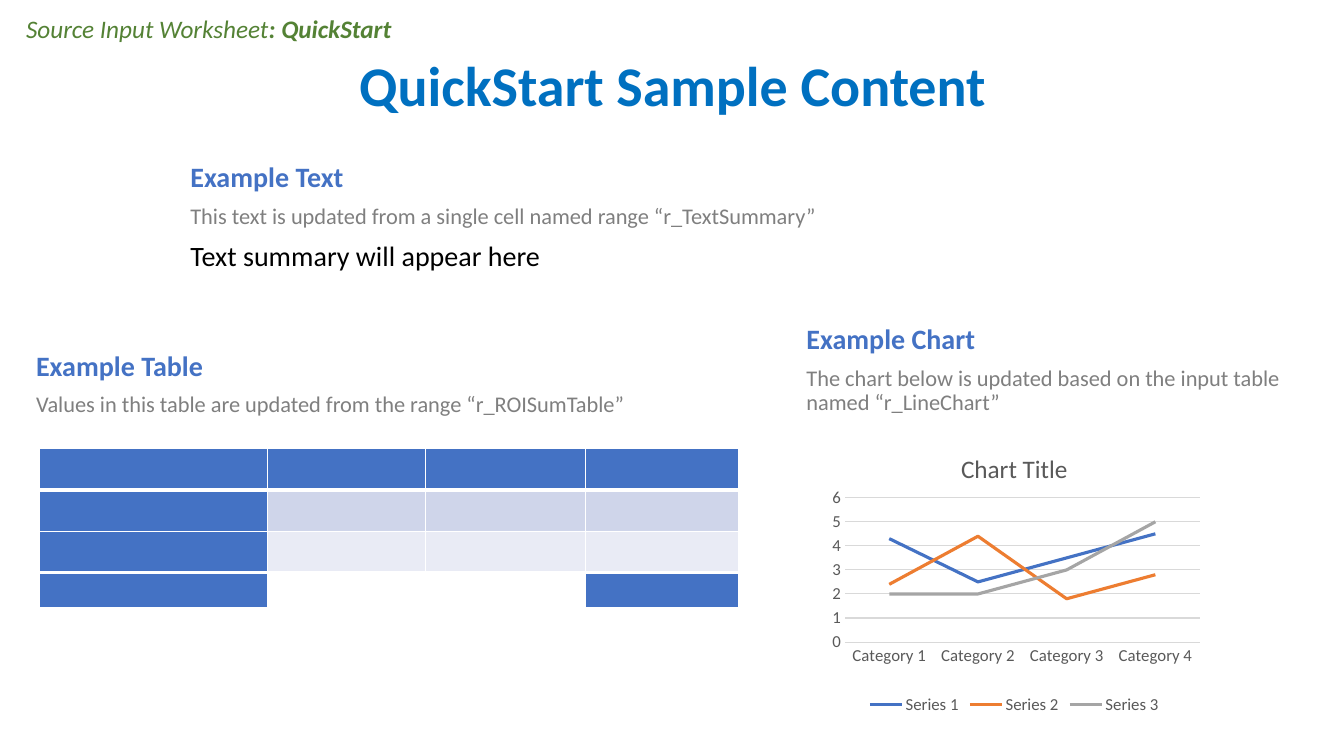
from lxml import etree
from pptx import Presentation, util as u
from pptx.chart.data import CategoryChartData
from pptx.dml.color import RGBColor
from pptx.enum import chart as ch, text
from pptx.oxml import parse_xml
from pptx.oxml.ns import nsdecls, qn

COLORS = {"title": "0070C0", "source": "548235", "heading": "4472C4",
          "note": "7F7F7F", "text": "000000", "chart_text": "595959",
          "grid": "D9D9D9", "white": "FFFFFF", "head": "4472C4",
          "band1": "CFD5EA", "band2": "E9EBF5", "blue": "4472C4",
          "orange": "ED7D31", "gray": "A5A5A5"}


def rgb(name):
    return RGBColor.from_string(COLORS[name])


def box(*lengths):
    return [u.Inches(n) for n in lengths]


class SlideBuilder:
    font = "Calibri"

    def __init__(self, prs):
        self.s = prs.slides.add_slide(prs.slide_layouts[5])

    def format_font(self, font, size, color, bold=False, italic=False):
        font.name, font.size = self.font, u.Pt(size)
        font.bold, font.italic = bold, italic
        font.color.rgb = rgb(color)

    def run(self, p, content, **fmt):
        r = p.add_run()
        r.text = content
        self.format_font(r.font, **fmt)

    def title(self, content, at):
        sp = self.s.shapes.title
        sp.left, sp.top, sp.width, sp.height = box(*at)
        tf = sp.text_frame
        tf.vertical_anchor = text.MSO_ANCHOR.MIDDLE
        p = tf.paragraphs[0]
        p.alignment, p.line_spacing = text.PP_ALIGN.CENTER, 0.9
        self.run(p, content, size=40, color="title", bold=True)

    def text_box(self, at, before=0, after=0, spacing=1.0):
        """Add an empty text box and return its paragraph."""
        tf = self.s.shapes.add_textbox(*box(*at)).text_frame
        tf.word_wrap = True
        tf.auto_size = text.MSO_AUTO_SIZE.SHAPE_TO_FIT_TEXT
        p = tf.paragraphs[0]
        p.space_before, p.space_after = u.Pt(before), u.Pt(after)
        p.line_spacing = spacing
        return p

    def label(self, content, at, **fmt):
        self.run(self.text_box(at, before=10, after=4, spacing=0.9), content, **fmt)

    def cell(self, cell, fill, top, bottom):
        """Fill a cell and give it white borders; top and bottom are in points."""
        cell.margin_top = cell.margin_bottom = 0
        tcPr = cell._tc.get_or_add_tcPr()
        for side, width in zip("LRTB", (1, 1, top, bottom)):
            tcPr.append(parse_xml(
                f'<a:ln{side} {nsdecls("a")} w="{u.Pt(width)}"><a:solidFill>'
                f'<a:srgbClr val="{COLORS["white"]}"/></a:solidFill></a:ln{side}>'))
        cell.fill.solid()
        cell.fill.fore_color.rgb = rgb(fill)

    def table(self, at, widths, heights, fills):
        tb = self.s.shapes.add_table(len(heights), len(widths), *box(*at)).table
        tb.last_row = tb.first_col = True
        for col, width in zip(tb.columns, widths):
            col.width = u.Inches(width)
        last = len(heights) - 1
        for i, (row, height) in enumerate(zip(tb.rows, heights)):
            row.height = u.Inches(height)
            for cell, fill in zip(row.cells, fills[i]):
                self.cell(cell, fill, top=3 if i in (1, last) else 1,
                          bottom=3 if i in (0, last - 1) else 1)

    def axis(self, axis):
        axis.major_tick_mark = axis.minor_tick_mark = ch.XL_TICK_MARK.NONE
        self.format_font(axis.tick_labels.font, size=12, color="chart_text")

    def line(self, line, color, width):
        line.color.rgb = rgb(color)
        line.width = u.Pt(width)

    def plot_layout(self, chart, **place):
        """Place the inner plot area by fractions of the chart."""
        area = chart.element.find(".//" + qn("c:plotArea"))
        for old in area.findall(qn("c:layout")):
            area.remove(old)
        layout = etree.Element(qn("c:layout"))
        manual = etree.SubElement(layout, qn("c:manualLayout"))
        values = {"layoutTarget": "inner", "xMode": "edge", "yMode": "edge", **place}
        for tag, val in values.items():
            etree.SubElement(manual, qn("c:" + tag)).set("val", str(val))
        area.insert(0, layout)

    def line_chart(self, title, at, categories, series):
        data = CategoryChartData()
        data.categories = categories
        for name, values, _ in series:
            data.add_series(name, values)
        chart = self.s.shapes.add_chart(
            ch.XL_CHART_TYPE.LINE, *box(*at), data).chart
        self.format_font(chart.font, size=10, color="text")
        self.run(chart.chart_title.text_frame.paragraphs[0], title,
                 size=18, color="chart_text")
        chart.chart_title.include_in_layout = False
        chart.has_legend = True
        chart.legend.position = ch.XL_LEGEND_POSITION.BOTTOM
        chart.legend.include_in_layout = False
        self.format_font(chart.legend.font, size=12, color="chart_text")
        cat, val = chart.category_axis, chart.value_axis
        self.axis(cat)
        self.axis(val)
        self.line(cat.format.line, "grid", 0.75)
        self.line(val.major_gridlines.format.line, "grid", 0.75)
        val.format.line.fill.background()
        val.minimum_scale, val.maximum_scale, val.major_unit = 0, 6, 1
        chart.plots[0].vary_by_categories = False
        for ser, (_, _, color) in zip(chart.plots[0].series, series):
            ser.smooth = False
            self.line(ser.format.line, color, 2.25)
        self.plot_layout(chart, x=0.08, y=0.22, w=0.88, h=0.51)


def main():
    prs = Presentation()
    prs.slide_width, prs.slide_height = box(13.33, 7.5)
    b = SlideBuilder(prs)
    heading = {"size": 20, "color": "heading", "bold": True}
    note = {"size": 16, "color": "note"}

    b.title("QuickStart Sample Content", (0.92, 0.15, 11.5, 1.45))
    p = b.text_box((0.16, 0.08, 7.76, 0.4), after=4)
    source = {"size": 18, "color": "source", "italic": True}
    b.run(p, "Source Input Worksheet", **source)
    b.run(p, ": QuickStart", bold=True, **source)

    b.label("Example Text", (1.79, 1.57, 6.74, 0.4), **heading)
    b.run(b.text_box((1.79, 1.96, 7.93, 0.37)),
          "This text is updated from a single cell named range “r_TextSummary”", **note)
    b.run(b.text_box((1.79, 2.32, 10.62, 0.44)),
          "Text summary will appear here", size=20, color="text")

    b.label("Example Table", (0.26, 3.45, 6.74, 0.4), **heading)
    b.label("Values in this table are updated from the range “r_ROISumTable”",
            (0.26, 3.85, 6.74, 0.34), **note)
    b.table((0.39, 4.45, 6.94, 1.58), (2.26, 1.57, 1.59, 1.52),
            (0.41, 0.41, 0.41, 0.35),
            [["head"] * 4, ["head"] + ["band1"] * 3, ["head"] + ["band2"] * 3,
             ["head", "white", "white", "head"]])

    b.label("Example Chart", (7.9, 3.18, 4.07, 0.4), **heading)
    b.label("The chart below is updated based on the input table named “r_LineChart”",
            (7.9, 3.59, 5.01, 0.59), **note)
    b.line_chart("Chart Title", (8.06, 4.32, 4, 2.81),
                 [f"Category {n}" for n in range(1, 5)],
                 [("Series 1", (4.3, 2.5, 3.5, 4.5), "blue"),
                  ("Series 2", (2.4, 4.4, 1.8, 2.8), "orange"),
                  ("Series 3", (2, 2, 3, 5), "gray")])
    prs.save("out.pptx")


if __name__ == "__main__":
    main()
